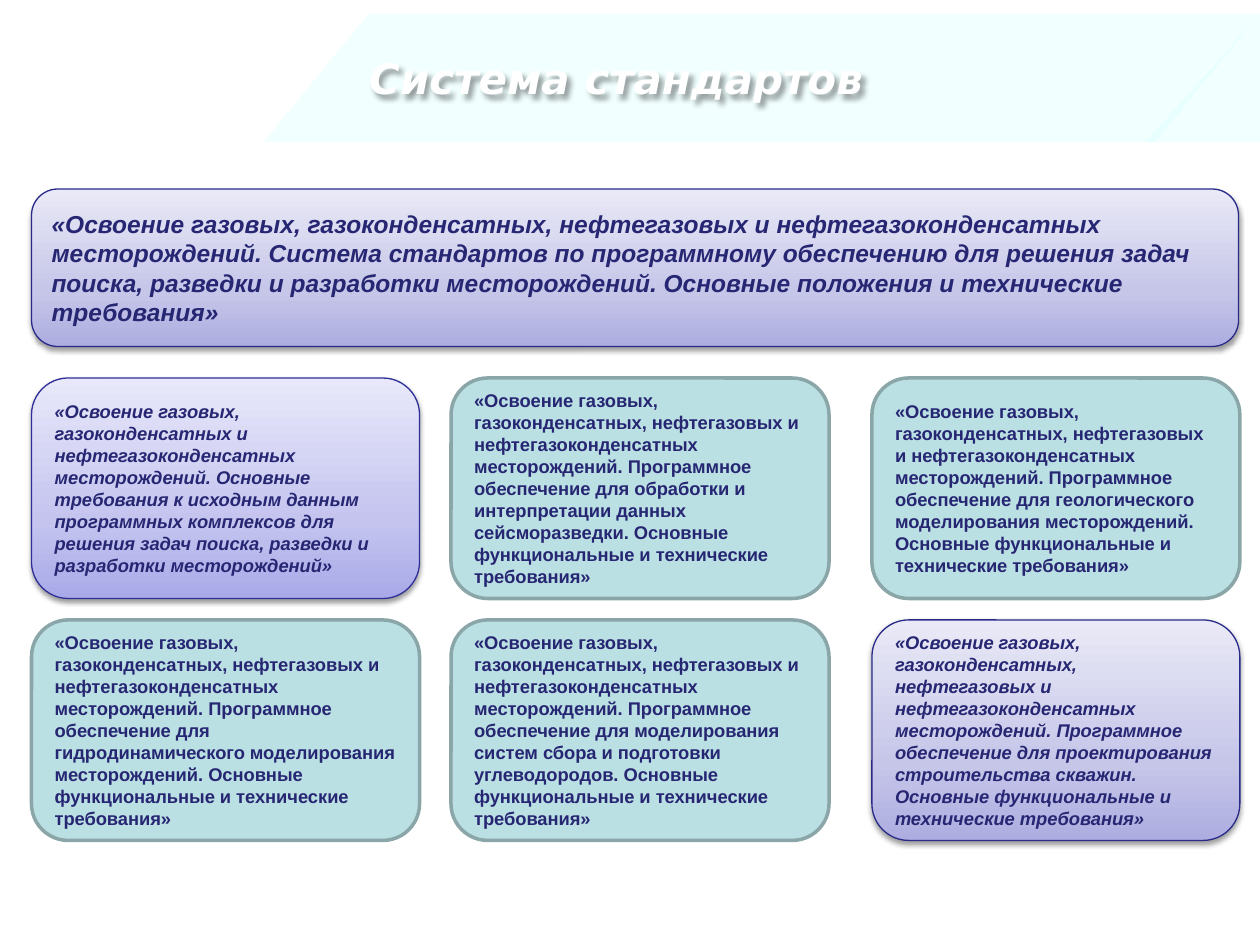
import pptx
import pptx.util
import pptx.oxml
import pptx.oxml.ns
import pptx.dml.color
import pptx.enum.shapes
import pptx.enum.text

Inches, Pt = pptx.util.Inches, pptx.util.Pt
RGB = pptx.dml.color.RGBColor.from_string
KIND = pptx.enum.shapes.MSO_SHAPE
ALIGN = pptx.enum.text.PP_ALIGN
MID = pptx.enum.text.MSO_ANCHOR.MIDDLE

# Content
TITLE = "Система стандартов"
FIELD = "«Освоение газовых, газоконденсатных, нефтегазовых и нефтегазоконденсатных месторождений. "
TAIL = " Основные функциональные и технические требования»"
SOFT = FIELD + "Программное обеспечение для {}." + TAIL
HEAD = FIELD + ("Система стандартов по программному обеспечению для решения задач поиска, "
                "разведки и разработки месторождений. Основные положения и технические требования»")
DATA = ("«Освоение газовых, газоконденсатных и нефтегазоконденсатных месторождений. "
        "Основные требования к исходным данным программных комплексов для решения задач "
        "поиска, разведки и разработки месторождений»")
CARDS = [
    [(DATA, "violet"),
     (SOFT.format("обработки и интерпретации данных сейсморазведки"), "teal"),
     (SOFT.format("геологического моделирования месторождений"), "teal")],
    [(SOFT.format("гидродинамического моделирования месторождений"), "teal"),
     (SOFT.format("моделирования систем сбора и подготовки углеводородов"), "teal"),
     (SOFT.format("проектирования строительства скважин"), "lilac")],
]

# Theme
THEME = {
    "band": "CCFFFF", "white": "FFFFFF", "ink": "262673",
    "body": "Arial", "title": "DejaVu Sans",
    "big": 24, "lead": 14, "small": 10.5,
    "lilac": {"fill": ["ADADE1", "C6C6E9", "E9E9F7"], "line": "2A2A89", "width": 0.75},
    "violet": {"fill": ["A9A9E9", "C4C4EF", "E8E8FA"], "line": "2F2F98", "width": 0.75},
    "teal": {"fill": ["BBE0E3"], "line": "8AA6A8", "width": 2},
}
STOPS = (0, 35, 100)

# Layout: left edge and width of each column, top of each row
COLS = [(0.25, 3.08), (3.58, 3), (6.92, 2.92)]
ROWS = [3, 4.92]
TALL = 1.75


def node(xml):
    return pptx.oxml.parse_xml(f"<a:root {pptx.oxml.ns.nsdecls('a')}>{xml}</a:root>")[0]


def shade(shape, blur, dist, angle):
    props = shape.element.spPr
    for old in props.findall(pptx.oxml.ns.qn("a:effectLst")):
        props.remove(old)
    props.append(node(
        f'<a:effectLst><a:outerShdw blurRad="{Pt(blur)}" dist="{Pt(dist)}" '
        f'dir="{angle * 60000}" rotWithShape="0"><a:srgbClr val="000000">'
        '<a:alpha val="38000"/></a:srgbClr></a:outerShdw></a:effectLst>'))


def blend(shape, tones):
    stops = "".join(f'<a:gs pos="{pos * 1000}"><a:srgbClr val="{tone}"/></a:gs>'
                    for pos, tone in zip(STOPS, tones))
    shape.fill.background()
    blank = shape.element.spPr.find(pptx.oxml.ns.qn("a:noFill"))
    blank.getparent().replace(blank, node(
        f'<a:gradFill><a:gsLst>{stops}</a:gsLst><a:lin ang="16200000" scaled="0"/></a:gradFill>'))


def write(shape, text, color, align, **form):
    shape.text_frame.word_wrap = True
    para = shape.text_frame.paragraphs[0]
    para.alignment = align
    run = para.add_run()
    run.text = text
    for key, value in form.items():
        setattr(run.font, key, value)
    run.font.color.rgb = RGB(color)


def place(slide, kind, box):
    shape = slide.shapes.add_shape(kind, *map(Inches, box))
    shape.shadow.inherit = False
    return shape


def band(slide, kind, box):
    shape = place(slide, kind, box)
    shape.fill.solid()
    shape.fill.fore_color.rgb = RGB(THEME["band"])
    tone = shape.element.spPr.find(".//" + pptx.oxml.ns.qn("a:srgbClr"))
    tone.append(node('<a:alpha val="26000"/>'))
    shape.line.fill.background()
    return shape


def card(slide, box, text, style, size):
    look = THEME[style]
    shape = place(slide, KIND.ROUNDED_RECTANGLE, box)
    if len(look["fill"]) > 1:
        blend(shape, look["fill"])
    else:
        shape.fill.solid()
        shape.fill.fore_color.rgb = RGB(look["fill"][0])
    shape.line.color.rgb = RGB(look["line"])
    shape.line.width = Pt(look["width"])
    if style != "teal":
        shade(shape, 3.1, 1.6, 90)
    shape.text_frame.vertical_anchor = MID
    write(shape, text, THEME["ink"], ALIGN.LEFT, name=THEME["body"],
          size=Pt(size), bold=True, italic=style != "teal")


def main():
    deck = pptx.Presentation()
    deck.slide_width, deck.slide_height = Inches(10), Inches(7.5)
    slide = deck.slides.add_slide(deck.slide_layouts[6])

    # Title band
    slant = band(slide, KIND.PARALLELOGRAM, (2.09, 0.11, 7.91, 1.02))
    slant.adjustments[0] = 0.82
    corner = band(slide, KIND.RIGHT_TRIANGLE, (9.09, 0.11, 0.91, 1.02))
    corner.element.spPr.xfrm.set("flipH", "1")

    # Title
    title = slide.shapes.add_textbox(*map(Inches, (2.08, 0.35, 5.5, 0.65)))
    title.text_frame.margin_left = Inches(0.22)
    title.text_frame.margin_top = Inches(0.07)
    write(title, TITLE, THEME["white"], ALIGN.CENTER, name=THEME["title"],
          size=Pt(THEME["big"]), bold=True, italic=True)
    shade(title, 3, 3, 45)

    # Lead standard and the grid below it
    card(slide, (0.25, 1.5, 9.58, 1.25), HEAD, "lilac", THEME["lead"])
    for top, row in zip(ROWS, CARDS):
        for (left, width), (text, style) in zip(COLS, row):
            card(slide, (left, top, width, TALL), text, style, THEME["small"])

    deck.save("out.pptx")


if __name__ == "__main__":
    main()
